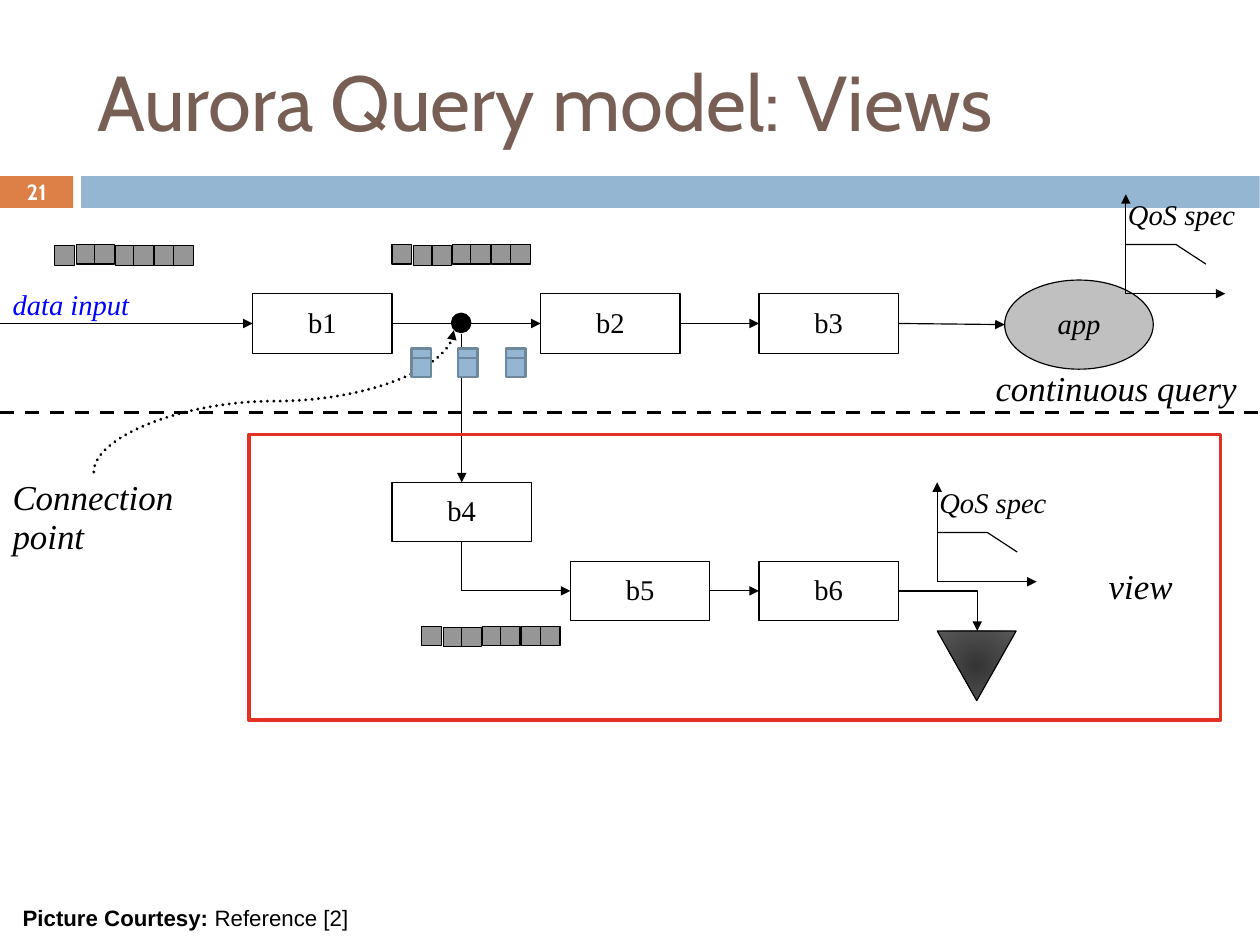
from dataclasses import dataclass
from math import cos, radians, sin

from lxml.etree import SubElement
from pptx import Presentation
from pptx.dml.color import RGBColor
from pptx.enum.dml import MSO_LINE
from pptx.enum.shapes import MSO_CONNECTOR, MSO_SHAPE
from pptx.enum.text import MSO_ANCHOR, MSO_AUTO_SIZE, PP_ALIGN
from pptx.oxml.ns import qn
from pptx.util import Inches, Pt

SERIF = "Times New Roman"
BLACK, WHITE = "000000", "FFFFFF"
BLUE, BLUE_EDGE, TOKEN_GRAY = "94B6D2", "6D879B", "969696"
SLIDE_WIDTH, SLIDE_HEIGHT = 28 / 2.54, 21 / 2.54
TOKEN_SIZE = 0.17
TOKEN_OFFSETS = (0, 0.19, 0.35, 0.53, 0.69, 0.87, 1.04)
BLOCK_WIDTH, BLOCK_HEIGHT = 1.22, 0.52


@dataclass
class Block:
    name: str
    left: float
    top: float


@dataclass
class Label:
    text: str
    left: float
    top: float
    width: float
    height: float
    size: float = 22
    color: str = BLACK
    inset: float = 0.11


@dataclass
class Arrow:
    begin: tuple[float, float]
    end: tuple[float, float]
    preset: str = "line"
    rotation: int = 0
    width: float = 0.75
    dash: MSO_LINE | None = None
    head: bool = True
    cap: str = "flat"


@dataclass
class TokenStrip:
    left: float
    top: float
    lowered: tuple[int, ...]


BLOCKS = [
    Block("b1", 2.21, 2.57), Block("b2", 4.73, 2.57), Block("b3", 6.64, 2.57),
    Block("b4", 3.43, 4.22), Block("b5", 4.99, 4.91), Block("b6", 6.64, 4.91),
]
FLOW = [
    Arrow((0, 2.83), (2.21, 2.83)),
    Arrow((3.43, 2.83), (4.73, 2.83)),
    Arrow((5.95, 2.83), (6.64, 2.83)),
    Arrow((7.86, 2.83), (8.79, 2.84)),
    Arrow((4.04, 2.92), (4.04, 4.22)),
    Arrow((4.04, 4.74), (4.99, 5.17), "bentConnector2", 270),
    Arrow((6.21, 5.17), (6.64, 5.17)),
    Arrow((7.86, 5.17), (8.55, 5.52), "bentConnector2"),
]
DIVIDER = Arrow((0, 3.61), (11.02, 3.61), width=2.25, dash=MSO_LINE.DASH, head=False)
POINTER = Arrow((0.82, 4.13), (3.97, 2.89), "curvedConnector3", 90, 2,
                MSO_LINE.ROUND_DOT, cap="rnd")
LABELS = [
    Label("continuous query", 8.6, 3.18, 2.35, 0.46),
    Label("view", 9.59, 4.91, 0.79, 0.46),
    Label("Connection\npoint", 0, 4.13, 1.64, 0.8),
    Label("data input", 0, 2.48, 1.25, 0.39, 18, "0000FF"),
]
TOKEN_STRIPS = [
    TokenStrip(0.48, 2.14, (0, 3, 4, 5, 6)),
    TokenStrip(3.43, 2.14, (1, 2)),
    TokenStrip(3.69, 5.48, (1, 2)),
]
QOS_ORIGINS = [(9.85, 2.57), (8.2, 5.09)]


def rgb(color: str) -> RGBColor:
    return RGBColor.from_string(color)


def set_frame(text_frame, inset: float, wrap: bool, anchor=MSO_ANCHOR.MIDDLE) -> None:
    text_frame.word_wrap = wrap
    text_frame.vertical_anchor = anchor
    text_frame.margin_left = text_frame.margin_right = Inches(inset)
    text_frame.margin_top = text_frame.margin_bottom = Inches(0.05 if inset == 0.1 else 0.06)


def format_text(text_frame, size: float, color: str, font: str = SERIF, italic: bool = False,
                bold: bool = False, align=PP_ALIGN.LEFT, spacing: float = 0.93) -> None:
    for paragraph in text_frame.paragraphs:
        paragraph.alignment = align
        paragraph.line_spacing = spacing
        for run in paragraph.runs:
            run.font.name, run.font.size = font, Pt(size)
            run.font.italic, run.font.bold = italic, bold
            run.font.color.rgb = rgb(color)


def add_box(slide, preset, left: float, top: float, width: float, height: float,
            fill: str | None, line: str | None = BLACK, weight: float = 0.75):
    shape = slide.shapes.add_shape(preset, Inches(left), Inches(top), Inches(width), Inches(height))
    shape.shadow.inherit = False
    if fill:
        shape.fill.solid()
        shape.fill.fore_color.rgb = rgb(fill)
    else:
        shape.fill.background()
    if line:
        shape.line.color.rgb = rgb(line)
        shape.line.width = Pt(weight)
    else:
        shape.line.fill.background()
    return shape


def add_node(slide, preset, name: str, left: float, top: float, width: float, height: float,
             fill: str, italic: bool = False) -> None:
    shape = add_box(slide, preset, left, top, width, height, fill)
    shape.text_frame.text = name
    set_frame(shape.text_frame, 0.11, False)
    format_text(shape.text_frame, 18, BLACK, italic=italic, align=PP_ALIGN.CENTER)


def add_text_box(slide, label: Label, wrap: bool, anchor=MSO_ANCHOR.TOP):
    shape = slide.shapes.add_textbox(Inches(label.left), Inches(label.top),
                                     Inches(label.width), Inches(label.height))
    shape.text_frame.text = label.text
    set_frame(shape.text_frame, label.inset, wrap, anchor)
    return shape.text_frame


def add_label(slide, label: Label) -> None:
    text_frame = add_text_box(slide, label, False)
    text_frame.auto_size = MSO_AUTO_SIZE.SHAPE_TO_FIT_TEXT
    format_text(text_frame, label.size, label.color, italic=True)


def add_arrow(slide, arrow: Arrow) -> None:
    (x1, y1), (x2, y2) = arrow.begin, arrow.end
    center_x, center_y = (x1 + x2) / 2, (y1 + y2) / 2
    cosine, sine = cos(radians(arrow.rotation)), sin(radians(arrow.rotation))
    half_x = (x2 - x1) / 2 * cosine + (y2 - y1) / 2 * sine
    half_y = (y2 - y1) / 2 * cosine - (x2 - x1) / 2 * sine
    connector = slide.shapes.add_connector(
        MSO_CONNECTOR.STRAIGHT,
        Inches(center_x - half_x), Inches(center_y - half_y),
        Inches(center_x + half_x), Inches(center_y + half_y))
    connector.line.color.rgb = rgb(BLACK)
    connector.line.width = Pt(arrow.width)
    if arrow.dash:
        connector.line.dash_style = arrow.dash
    properties = connector._element.spPr
    properties.find(qn("a:prstGeom")).set("prst", arrow.preset)
    properties.find(qn("a:ln")).set("cap", arrow.cap)
    if arrow.rotation:
        properties.find(qn("a:xfrm")).set("rot", str(arrow.rotation * 60000))
    if arrow.head:
        SubElement(properties.find(qn("a:ln")), qn("a:tailEnd"), type="triangle")
    SubElement(properties, qn("a:effectLst"))


def add_qos_graph(slide, x: float, y: float) -> None:
    add_arrow(slide, Arrow((x, y), (x, y - 0.87)))
    add_arrow(slide, Arrow((x, y), (x + 0.87, y)))
    builder = slide.shapes.build_freeform(Inches(x), Inches(y - 0.43))
    builder.add_line_segments([(Inches(x + 0.44), Inches(y - 0.43)),
                               (Inches(x + 0.7), Inches(y - 0.26))], close=False)
    curve = builder.convert_to_shape()
    curve.shadow.inherit = False
    curve.fill.background()
    curve.line.color.rgb = rgb(BLACK)
    curve.line.width = Pt(0.75)
    add_label(slide, Label("QoS spec", x - 0.08, y - 0.87, 1.15, 0.38, 18, inset=0.1))


def add_output_triangle(slide) -> None:
    triangle = add_box(slide, MSO_SHAPE.ISOSCELES_TRIANGLE, 8.2, 5.52, 0.69, 0.61, None)
    triangle.rotation = 180
    triangle.fill.gradient()
    for stop, color in zip(triangle.fill.gradient_stops, ("353535", "595959")):
        stop.color.rgb = rgb(color)
    gradient = triangle._element.spPr.find(qn("a:gradFill"))
    gradient.remove(gradient.find(qn("a:lin")))
    radial = SubElement(gradient, qn("a:path"))
    radial.set("path", "circle")
    SubElement(radial, qn("a:fillToRect"), l="50000", t="50000", r="50000", b="50000")


def add_title(slide) -> None:
    title = slide.shapes.title
    title.left, title.top, title.width, title.height = map(Inches, (0.74, 0.28, 9.83, 1.19))
    title.text_frame.text = "Aurora Query model: Views"
    title.text_frame.auto_size = MSO_AUTO_SIZE.NONE
    set_frame(title.text_frame, 0.11, True)
    format_text(title.text_frame, 49, "775F55", "Cabin", spacing=1.0)


def main() -> None:
    presentation = Presentation()
    presentation.slide_width = Inches(SLIDE_WIDTH)
    presentation.slide_height = Inches(SLIDE_HEIGHT)
    slide = presentation.slides.add_slide(presentation.slide_layouts[5])
    add_title(slide)
    add_box(slide, MSO_SHAPE.RECTANGLE, 0, 1.54, 0.64, 0.28, "DD8047", None)
    add_box(slide, MSO_SHAPE.RECTANGLE, 0.71, 1.54, 10.31, 0.28, BLUE, None)
    for block in BLOCKS:
        add_node(slide, MSO_SHAPE.RECTANGLE, block.name, block.left, block.top,
                 BLOCK_WIDTH, BLOCK_HEIGHT, WHITE)
    add_node(slide, MSO_SHAPE.OVAL, "app", 8.79, 2.45, 1.3, 0.78, "C0C0C0", True)
    for arrow in FLOW:
        add_arrow(slide, arrow)
    add_output_triangle(slide)
    for x, y in QOS_ORIGINS:
        add_qos_graph(slide, x, y)
    add_arrow(slide, DIVIDER)
    add_box(slide, MSO_SHAPE.OVAL, 3.95, 2.74, 0.17, 0.17, BLACK)
    for label in LABELS:
        add_label(slide, label)
    add_arrow(slide, POINTER)
    for strip in TOKEN_STRIPS:
        for index, offset in enumerate(TOKEN_OFFSETS):
            top = strip.top + (0.01 if index in strip.lowered else 0)
            add_box(slide, MSO_SHAPE.RECTANGLE, strip.left + offset, top,
                    TOKEN_SIZE, TOKEN_SIZE, TOKEN_GRAY)
    caption = add_text_box(slide, Label("Picture Courtesy: ", 0.1, 7.88, 3.5, 0.33, inset=0.1), True)
    caption.paragraphs[0].add_run().text = "Reference [2]"
    format_text(caption, 14, BLACK, "Arial")
    caption.paragraphs[0].runs[0].font.bold = True
    number = add_text_box(slide, Label("21", 0, 1.53, 0.64, 0.29), True, MSO_ANCHOR.MIDDLE)
    format_text(number, 13.9, WHITE, "Cabin", bold=True, align=PP_ALIGN.CENTER, spacing=1.0)
    add_box(slide, MSO_SHAPE.RECTANGLE, 2.18, 3.8, 8.5, 2.5, None, "E33123", 2.25)
    for top in (3.05, 3.13):
        for left in (3.6, 4.01, 4.43):
            add_box(slide, MSO_SHAPE.RECTANGLE, left, top, TOKEN_SIZE, TOKEN_SIZE, BLUE, BLUE_EDGE, 1.5)
    presentation.save("out.pptx")


if __name__ == "__main__":
    main()
